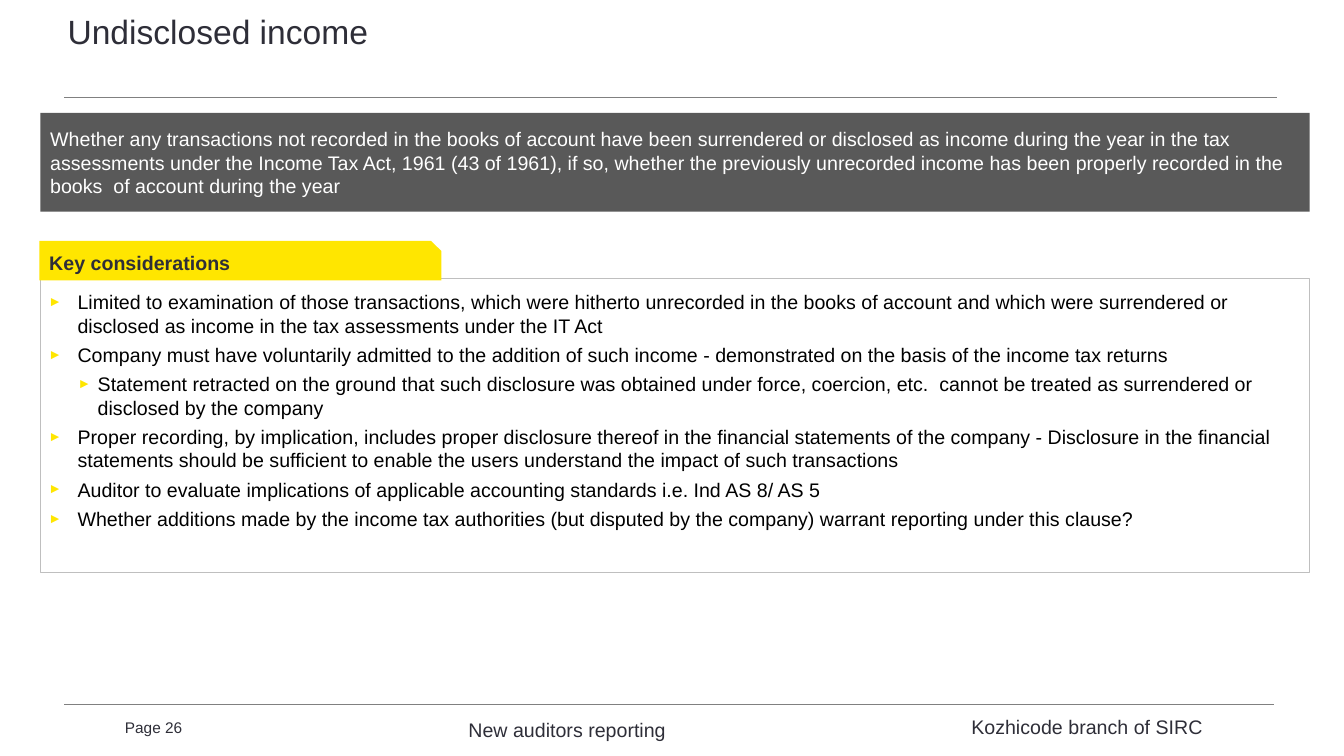
import pptx
import pptx.dml.color
import pptx.enum.shapes
import pptx.enum.text
import pptx.oxml
import pptx.oxml.ns
import pptx.util
from dataclasses import dataclass
from lxml import etree

Inches = pptx.util.Inches
Pt = pptx.util.Pt
Shape = pptx.enum.shapes.MSO_SHAPE
Align = pptx.enum.text.PP_ALIGN
Anchor = pptx.enum.text.MSO_ANCHOR


@dataclass(frozen=True)
class Theme:
    font: str = "Arial"
    ink: str = "2E2E38"
    black: str = "000000"
    white: str = "FFFFFF"
    accent: str = "FFE600"
    banner: str = "595959"
    rule: str = "808080"
    border: str = "BFBFBF"
    title_size: int = 24
    text_size: int = 14
    page_size: int = 11
    line_width: float = 0.75
    bullet_percent: int = 70


def color(value):
    return pptx.dml.color.RGBColor.from_string(value)


class SlideBuilder:
    def __init__(self, presentation, theme):
        self.theme = theme
        self.slide = presentation.slides.add_slide(presentation.slide_layouts[1])

    def place(self, shape, box):
        shape.left, shape.top, shape.width, shape.height = map(Inches, box)

    def frame(self, shape, insets=(0.1, 0.05, 0.1, 0.05), anchor=Anchor.TOP):
        frame = shape.text_frame
        frame.word_wrap = True
        frame.auto_size = pptx.enum.text.MSO_AUTO_SIZE.NONE
        frame.vertical_anchor = anchor
        (frame.margin_left, frame.margin_top,
         frame.margin_right, frame.margin_bottom) = map(Inches, insets)
        return frame

    def add_text(self, paragraph, text, ink, size=None, bold=False, align=Align.LEFT):
        paragraph.alignment = align
        run = paragraph.add_run()
        run.text = text
        run.font.name = self.theme.font
        run.font.size = Pt(size or self.theme.text_size)
        run.font.bold = bold
        run.font.color.rgb = color(ink)

    def title(self, text, box):
        shape = self.slide.shapes.title
        self.place(shape, box)
        paragraph = self.frame(shape, (0, 0, 0, 0)).paragraphs[0]
        paragraph.line_spacing = 0.85
        self.add_text(paragraph, text, self.theme.ink, self.theme.title_size)

    def rule(self, left, right, top):
        line = self.slide.shapes.add_connector(
            pptx.enum.shapes.MSO_CONNECTOR.STRAIGHT,
            Inches(left), Inches(top), Inches(right), Inches(top))
        line.line.color.rgb = color(self.theme.rule)
        line.line.width = Pt(self.theme.line_width)
        etree.SubElement(line._element.spPr, pptx.oxml.ns.qn("a:effectLst"))

    def label(self, text, box, size=None, align=Align.CENTER,
              insets=(0.1, 0.05, 0.1, 0.05)):
        shape = self.slide.shapes.add_textbox(*map(Inches, box))
        paragraph = self.frame(shape, insets).paragraphs[0]
        self.add_text(paragraph, text, self.theme.ink, size, align=align)

    def panel(self, text, box, fill, ink, kind=Shape.RECTANGLE, corner=None,
              bold=False, anchor=Anchor.TOP, spacing=0):
        shape = self.slide.shapes.add_shape(kind, *map(Inches, box))
        shape.shadow.inherit = False
        shape.fill.solid()
        shape.fill.fore_color.rgb = color(fill)
        shape.line.fill.background()
        if corner is not None:
            shape.adjustments[0] = corner
        paragraph = self.frame(shape, anchor=anchor).paragraphs[0]
        paragraph.space_before = paragraph.space_after = Pt(spacing)
        self.add_text(paragraph, text, ink, bold=bold)

    def bullet_list(self, items, box, indents):
        shape = self.slide.placeholders[1]
        self.place(shape, box)
        shape.line.color.rgb = color(self.theme.border)
        shape.line.width = Pt(self.theme.line_width)
        frame = self.frame(shape, (0.08, 0.12, 0.08, 0.08))
        for index, (level, text) in enumerate(items):
            paragraph = frame.add_paragraph() if index else frame.paragraphs[0]
            paragraph.level = level
            paragraph.space_before, paragraph.space_after = Pt(0), Pt(4)
            self.add_text(paragraph, text, self.theme.black)
            self.bullet(paragraph, *indents[level])

    def bullet(self, paragraph, margin, hanging):
        properties = paragraph._p.get_or_add_pPr()
        properties.set("marL", str(Inches(margin)))
        properties.set("indent", str(-Inches(hanging)))
        namespace = pptx.oxml.ns.nsdecls("a")
        for markup in (
            f'<a:buClr {namespace}><a:srgbClr val="{self.theme.accent}"/></a:buClr>',
            f'<a:buSzPct {namespace} val="{self.theme.bullet_percent * 1000}"/>',
            f'<a:buFont {namespace} typeface="{self.theme.font}"/>',
            f'<a:buChar {namespace} char="►"/>',
        ):
            properties.append(pptx.oxml.parse_xml(markup))


CONSIDERATIONS = [
    (0, "Limited to examination of those transactions, which were hitherto unrecorded "
        "in the books of account and which were surrendered or disclosed as income "
        "in the tax assessments under the IT Act"),
    (0, "Company must have voluntarily admitted to the addition of such income - "
        "demonstrated on the basis of the income tax returns"),
    (1, "Statement retracted on the ground that such disclosure was obtained under "
        "force, coercion, etc.  cannot be treated as surrendered or disclosed by "
        "the company"),
    (0, "Proper recording, by implication, includes proper disclosure thereof in the "
        "financial statements of the company - Disclosure in the financial statements "
        "should be sufficient to enable the users understand the impact of such "
        "transactions"),
    (0, "Auditor to evaluate implications of applicable accounting standards i.e. "
        "Ind AS 8/ AS 5"),
    (0, "Whether additions made by the income tax authorities (but disputed by the "
        "company) warrant reporting under this clause?"),
]
CLAUSE = (
    "Whether any transactions not recorded in the books of account have been "
    "surrendered or disclosed as income during the year in the tax assessments under "
    "the Income Tax Act, 1961 (43 of 1961), if so, whether the previously unrecorded "
    "income has been properly recorded in the books  of account during the year")


def main():
    presentation = pptx.Presentation()
    presentation.slide_width, presentation.slide_height = Inches(13.34), Inches(7.5)
    theme = Theme()
    builder = SlideBuilder(presentation, theme)

    # Title and rules
    builder.title("Undisclosed income", (0.67, 0.17, 12.01, 0.65))
    builder.rule(0.64, 12.68, 0.97)
    builder.rule(0.64, 12.65, 6.99)

    # Clause banner
    builder.panel(CLAUSE, (0.4, 1.12, 12.6, 0.98), theme.banner, theme.white,
                  anchor=Anchor.MIDDLE, spacing=3)

    # Key considerations
    builder.bullet_list(CONSIDERATIONS, (0.4, 2.76, 12.6, 2.92),
                        indents=[(0.29, 0.29), (0.49, 0.2)])
    builder.panel("Key considerations", (0.39, 2.39, 3.99, 0.39), theme.accent,
                  theme.ink, Shape.SNIP_1_RECTANGLE, corner=0.258, bold=True)

    # Footer
    builder.label("Page 26", (1.24, 7.08, 0.73, 0.2), theme.page_size, Align.LEFT,
                  insets=(0, 0.05, 0.1, 0.05))
    builder.label("New auditors reporting", (3.94, 7.07, 3.38, 0.2))
    builder.label("Kozhicode branch of SIRC", (9.1, 7.04, 3.38, 0.2))

    presentation.save("out.pptx")


if __name__ == "__main__":
    main()
